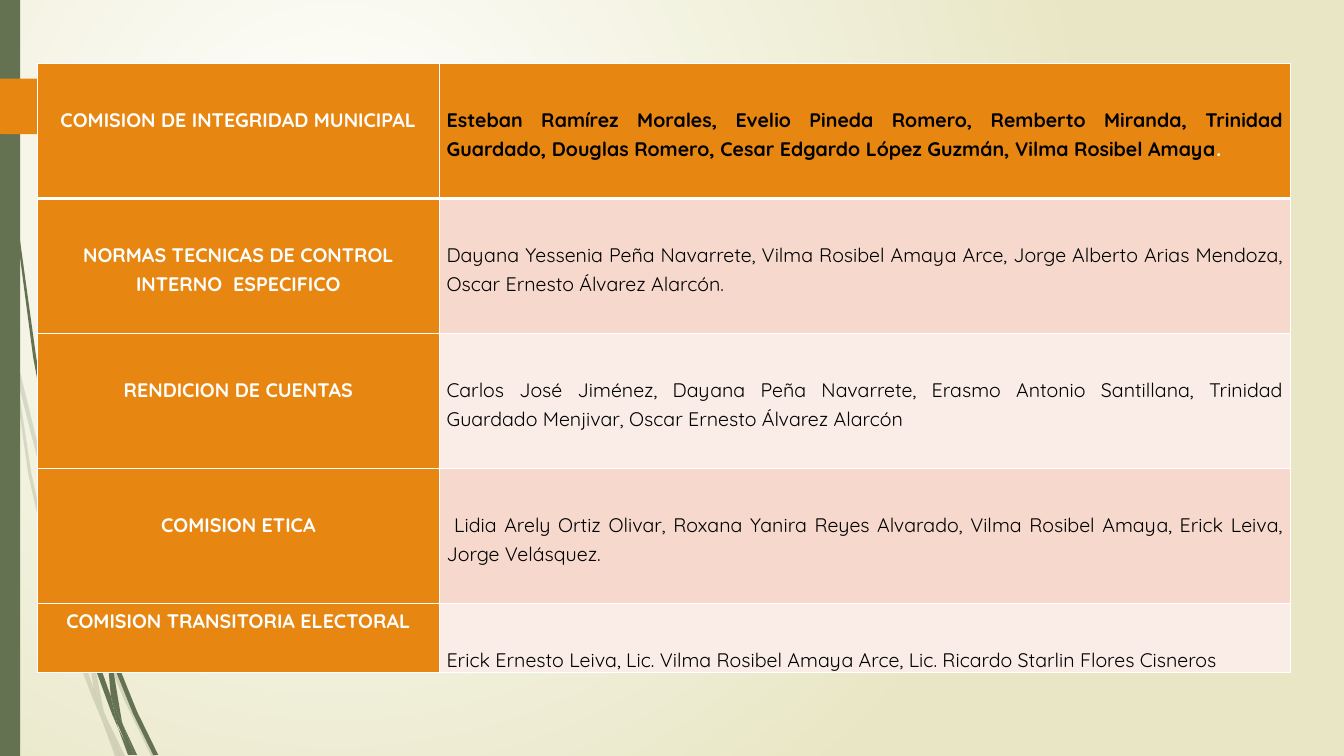
import pptx
import pptx.util
import pptx.dml.color
import pptx.enum.shapes
import pptx.enum.text
import pptx.oxml
import pptx.oxml.ns
import lxml.etree

# Content: committee, members
COMMITTEES = [
    ("COMISION DE INTEGRIDAD MUNICIPAL",
     "Esteban Ramírez Morales, Evelio Pineda Romero, Remberto Miranda, Trinidad Guardado, "
     "Douglas Romero, Cesar Edgardo López Guzmán, Vilma Rosibel Amaya"),
    ("NORMAS TECNICAS DE CONTROL INTERNO  ESPECIFICO",
     "Dayana Yessenia Peña Navarrete, Vilma Rosibel Amaya Arce, Jorge Alberto Arias Mendoza, "
     "Oscar Ernesto Álvarez Alarcón."),
    ("RENDICION DE CUENTAS",
     "Carlos José Jiménez, Dayana Peña Navarrete, Erasmo Antonio Santillana, "
     "Trinidad Guardado Menjivar, Oscar Ernesto Álvarez Alarcón"),
    ("COMISION ETICA",
     " Lidia Arely Ortiz Olivar, Roxana Yanira Reyes Alvarado, Vilma Rosibel Amaya, "
     "Erick Leiva, Jorge Velásquez."),
    ("COMISION TRANSITORIA ELECTORAL",
     "Erick Ernesto Leiva, Lic. Vilma Rosibel Amaya Arce, "
     "Lic. Ricardo Starlin Flores Cisneros"),
]

COLORS = {"white": "FFFFFF", "black": "000000", "sand": "E8E6C4", "green": "647252",
          "orange": "E78712", "band_dark": "F6D9CC", "band_light": "FAEDE7"}
FONT = "Quicksand"
WIDTH, HEIGHT = 13.33, 7.5
TABLE_LEFT, TABLE_TOP = 0.37, 0.63
COLUMNS = [3.99, 8.44]
ROW = 1.34
ROWS = [ROW] * 4 + [ROW / 2]
TOP_GAP = 28  # points above the text in a cell

# Grass blades, as outlines in inches
PALE_BLADES = [
    [(0.58, 5.22), (0.84, 5.99), (0.85, 5.86), (0.62, 5.2), (0.37, 4.39), (0.14, 3.45),
     (0.17, 3.76), (0.36, 4.51)],
    [(0.92, 6.07), (0.88, 5.96), (0.88, 6.1), (1.23, 6.94), (1.5, 7.5), (1.55, 7.5),
     (1.27, 6.92)],
    [(1.19, 7.5), (1.24, 7.5), (1.05, 7.11)],
    [(0.93, 6.83), (0.7, 6.19), (0.48, 5.45), (0.31, 4.69), (0.17, 3.76), (0.11, 3.5),
     (0.28, 4.7), (0.45, 5.46), (0.65, 6.21), (0.92, 6.93), (1.01, 7.14), (0.99, 7.07)],
    [(0.84, 5.99), (0.87, 6.46), (0.93, 6.83), (0.96, 6.92), (1.05, 7.11), (1.03, 7.06),
     (0.91, 6.46), (0.88, 6.1)],
    [(1.01, 7.14), (1.14, 7.5), (1.19, 7.5)],
    [(0.96, 6.92), (0.93, 6.83), (0.99, 7.07), (1.01, 7.14), (1.19, 7.5), (1.05, 7.11)],
]
DARK_BLADES = [
    [(0.07, 1.1), (0.17, 2.33), (0.33, 3.55), (0.56, 4.77), (0.57, 4.81), (0.55, 4.53),
     (0.36, 3.55), (0.19, 2.32), (0.08, 1.09), (0.04, 0), (0.03, 0), (0.04, 0.48)],
    [(1.13, 6.49), (1.1, 6.41), (1.11, 6.56), (1.32, 7.08), (1.52, 7.49), (1.57, 7.49),
     (1.36, 7.06)],
    [(1.1, 6.91), (0.98, 6.57), (0.72, 5.56), (0.64, 5.05), (0.57, 4.77), (0.68, 5.57),
     (0.93, 6.59), (1.11, 7.08), (1.17, 7.22), (1.16, 7.17)],
    [(1.33, 7.49), (1.36, 7.49), (1.22, 7.19)],
    [(1.17, 7.22), (1.27, 7.49), (1.31, 7.49)],
    [(1.06, 6.45), (1.1, 6.91), (1.16, 7.06), (1.22, 7.19), (1.21, 7.16), (1.11, 6.56)],
    [(1.16, 7.06), (1.1, 6.91), (1.16, 7.17), (1.3, 7.49), (1.33, 7.49), (1.22, 7.19)],
]
TAB = [(0, 0.78), (1.46, 0.78), (1.74, 1.06), (1.46, 1.34), (0, 1.33)]

inch, Pt = pptx.util.Inches, pptx.util.Pt
qn = pptx.oxml.ns.qn


def rgb(name):
    return pptx.dml.color.RGBColor.from_string(COLORS[name])


def paint(sp, color, alpha=None):
    sp.shadow.inherit = False
    sp.fill.solid()
    sp.fill.fore_color.rgb = rgb(color)
    sp.line.fill.background()
    if alpha:
        clr = sp.fill._xPr.find(".//" + qn("a:srgbClr"))
        lxml.etree.SubElement(clr, qn("a:alpha")).set("val", str(alpha * 1000))


def outline(points, color, alpha=None):
    pts = [(inch(x), inch(y)) for x, y in points]
    fb = slide.shapes.build_freeform(*pts[0], scale=1.0)
    fb.add_line_segments(pts[1:], close=True)
    paint(fb.convert_to_shape(), color, alpha)


def border(cell, widths):
    tcPr = cell._tc.get_or_add_tcPr()
    for i, (side, width) in enumerate(widths.items()):
        ln = lxml.etree.Element(qn("a:ln" + side), w=str(Pt(width)))
        fill = lxml.etree.SubElement(ln, qn("a:solidFill"))
        lxml.etree.SubElement(fill, qn("a:srgbClr")).set("val", COLORS["white"])
        tcPr.insert(i, ln)


def add_run(p, text, color, bold):
    r = p.add_run()
    r.text = text
    for key, value in {"name": FONT, "size": Pt(14), "bold": bold}.items():
        setattr(r.font, key, value)
    r.font.color.rgb = rgb(color)


prs = pptx.Presentation()
prs.slide_width, prs.slide_height = inch(WIDTH), inch(HEIGHT)
slide = prs.slides.add_slide(prs.slide_layouts[6])

# Background: round gradient, brightest at upper left
bg = slide.background.fill
bg.gradient()
for stop, color in zip(bg.gradient_stops, ("white", "sand")):
    stop.color.rgb = rgb(color)
grad = slide._element.find(".//" + qn("a:gradFill"))
grad.remove(grad.find(qn("a:lin")))
round_path = lxml.etree.SubElement(grad, qn("a:path"))
round_path.set("path", "circle")
focus = lxml.etree.SubElement(round_path, qn("a:fillToRect"))
for side, share in {"l": 50, "t": 50, "r": 100, "b": 100}.items():
    focus.set(side, str(share * 1000))

# Grass, side bar and tab
for blade in PALE_BLADES:
    outline(blade, "green", 20)
for blade in DARK_BLADES:
    outline(blade, "green")
bar = slide.shapes.add_shape(pptx.enum.shapes.MSO_SHAPE.RECTANGLE, 0, 0, inch(0.2), inch(HEIGHT))
paint(bar, "green")
outline(TAB, "orange")

# Table
table = slide.shapes.add_table(len(ROWS), len(COLUMNS), inch(TABLE_LEFT), inch(TABLE_TOP),
                               inch(sum(COLUMNS)), inch(sum(ROWS))).table
for col, width in zip(table.columns, COLUMNS):
    col.width = inch(width)
for row, height in zip(table.rows, ROWS):
    row.height = inch(height)

ALIGN = pptx.enum.text.PP_ALIGN
last = len(COMMITTEES) - 1
for i, texts in enumerate(COMMITTEES):
    for j, text in enumerate(texts):
        label, head = j == 0, i == 0
        cell = table.cell(i, j)
        gap = 0 if label and i == last else TOP_GAP
        for key, value in {"margin_left": inch(0.07), "margin_right": inch(0.07),
                           "margin_top": Pt(gap), "margin_bottom": 0}.items():
            setattr(cell, key, value)
        cell.fill.solid()
        band = "band_dark" if i % 2 else "band_light"
        cell.fill.fore_color.rgb = rgb("orange" if label or head else band)
        border(cell, {"L": 1, "R": 1, "T": 3 if i == 1 else 1, "B": 3 if head else 1})
        p = cell.text_frame.paragraphs[0]
        for key, value in {"alignment": ALIGN.CENTER if label else ALIGN.JUSTIFY,
                           "line_spacing": 1.2}.items():
            setattr(p, key, value)
        add_run(p, text, "white" if label else "black", label or head)
        if head and not label:
            add_run(p, ".", "white", True)

prs.save("out.pptx")
